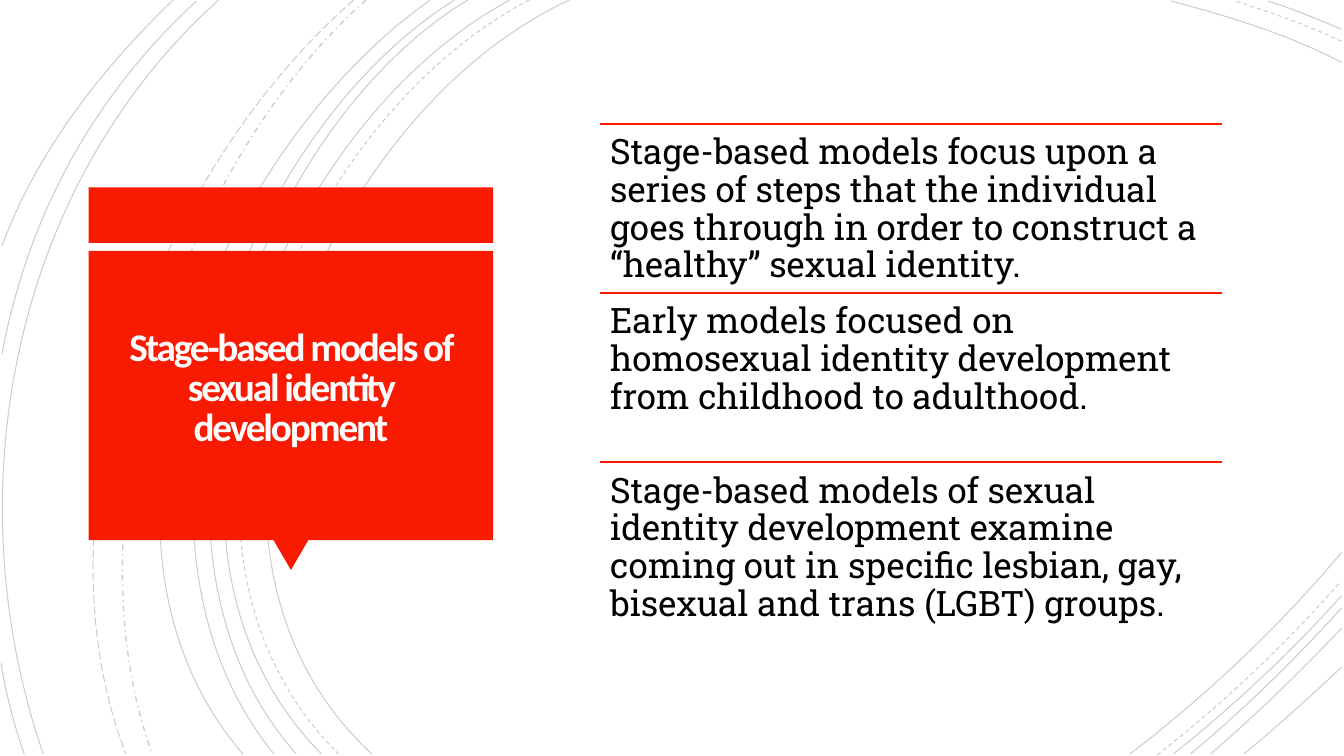
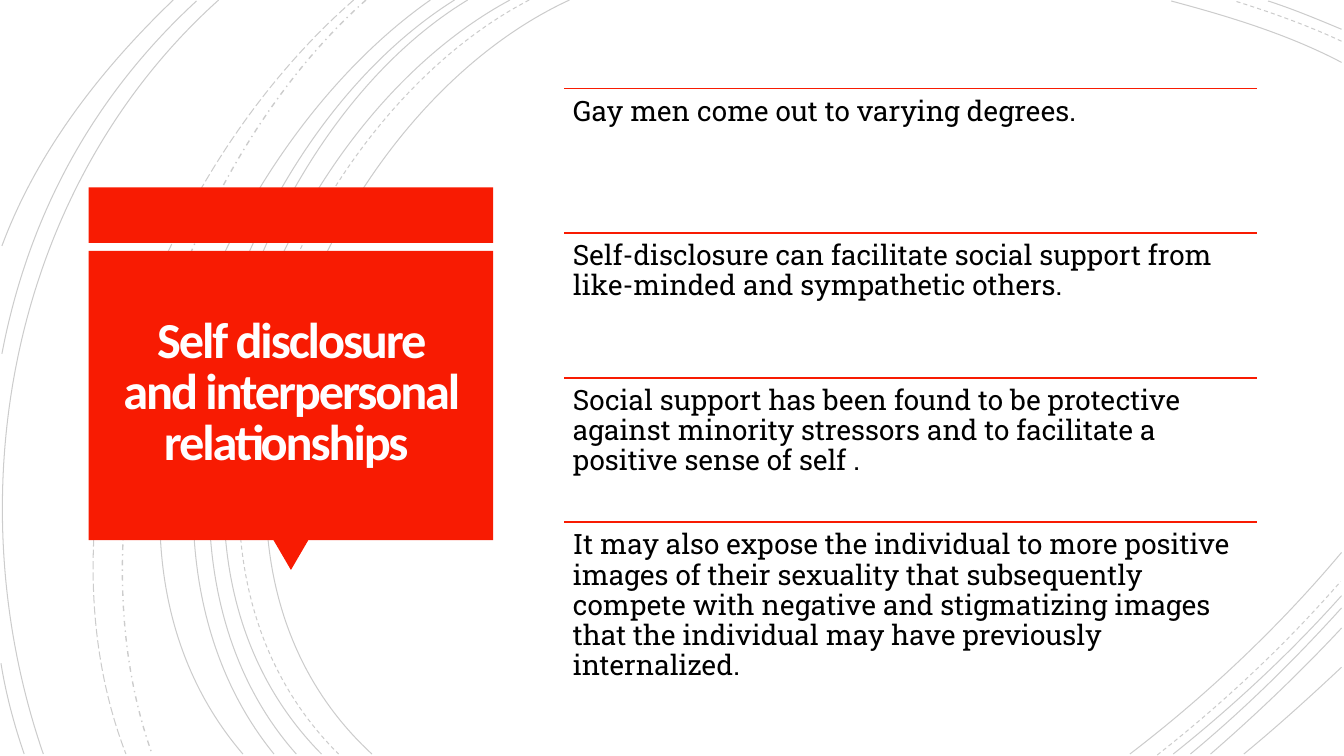
from collections import namedtuple

from lxml import etree
from pptx import Presentation
from pptx.dml.color import RGBColor
from pptx.enum.dml import MSO_LINE
from pptx.enum.shapes import MSO_CONNECTOR, MSO_SHAPE
from pptx.enum.text import MSO_ANCHOR, PP_ALIGN
from pptx.oxml.ns import qn
from pptx.util import Pt

RECTANGLE, TRIANGLE = MSO_SHAPE.RECTANGLE, MSO_SHAPE.ISOSCELES_TRIANGLE
STRAIGHT = MSO_CONNECTOR.STRAIGHT
SOLID, DASH = MSO_LINE.SOLID, MSO_LINE.DASH
DASH_DOT, LONG_DASH = MSO_LINE.DASH_DOT, MSO_LINE.LONG_DASH
TOP, MIDDLE = MSO_ANCHOR.TOP, MSO_ANCHOR.MIDDLE
LEFT, CENTER = PP_ALIGN.LEFT, PP_ALIGN.CENTER

Box = namedtuple("Box", "left top width height")

COLORS = {"accent": "F81B02", "title": "FFFEFF", "body": "000000", "arc": "000000"}
TITLE_FONT, BODY_FONT = "Calibri", "Roboto Slab"
ARC_OPACITY = 20
BAND_HEIGHT, BAND_GAP = 39.6, 5.7
POINTER_WIDTH, POINTER_HEIGHT, POINTER_OVERLAP = 25.2, 21.6, 0.4
TITLE_MARGIN, TITLE_INSET = 6.4, 18

PAGE = Box(0, 0, 960, 540)
PANEL = Box(63.3, 133.9, 289, 252)

ARCS = [
    (SOLID, 0.75, (406.8, 0), (226.8, 82.8), (103, 388.8), (265.7, 538.6)),
    (SOLID, 0.75, (958.3, 44.6), (920.2, 24.5), (877, 11.5), (836.6, 0.7)),
    (SOLID, 0.75, (807.1, 538.6), (861.8, 496.8), (913.7, 447.8), (958.3, 394.6)),
    (DASH, 0.75, (378, 0), (205.2, 90), (88.6, 386.6), (241.9, 538.6)),
    (DASH, 0.75, (958.3, 29.5), (933.8, 18), (907.2, 8.6), (882, 0.7)),
    (DASH, 0.75, (826.6, 539.3), (873.4, 502.6), (918, 460.8), (957.6, 415.4)),
    (SOLID, 0.75, (364.3, 0), (194.4, 91.4), (79.2, 386.6), (229.7, 538.6)),
    (SOLID, 0.75, (958.3, 20.9), (941, 13.7), (923.8, 6.5), (905.8, 0.7)),
    (SOLID, 0.75, (838.1, 538.6), (880.6, 504.7), (921.6, 466.6), (958.3, 425.5)),
    (SOLID, 0.75, (334.1, 0), (175.7, 95.8), (79.2, 389.5), (211.7, 538.6)),
    (SOLID, 0.75, (850.3, 538.6), (888.5, 506.9), (924.5, 471.6), (958.3, 434.2)),
    (SOLID, 0.75, (324.7, 0), (166.3, 99.4), (69.8, 383.8), (195.8, 538.6)),
    (SOLID, 0.75, (864.7, 538.6), (897.1, 510.5), (928.8, 480.2), (958.3, 448.6)),
    (SOLID, 0.75, (307.4, 0), (156.2, 105.8), (38.2, 380.9), (173.5, 538.6)),
    (SOLID, 0.75, (888.5, 538.6), (912.2, 519.1), (935.3, 498.2), (958.3, 476.6)),
    (DASH_DOT, 1, (261.4, 0), (126.7, 119.5), (46.8, 366.5), (108.7, 538.6)),
    (LONG_DASH, 0.75, (252.7, 0), (113, 121.7), (20.9, 359.3), (90, 538.6)),
    (SOLID, 0.75, (156.2, 0), (7.9, 133.2), (-33.1, 352.8), (31, 538.6)),
    (SOLID, 0.75, (140.4, 0.7), (66.2, 69.1), (20.2, 154.1), (1.4, 252.7)),
    (SOLID, 0.75, (0.7, 473.8), (4.3, 496.1), (10.1, 517.7), (17.3, 538.6)),
    (SOLID, 0.75, (123.8, 0), (72, 49.7), (26.6, 108), (1.4, 175.7)),
]

SLIDES = [
    {
        "title": "Stage-based models of sexual identity development",
        "title_size": 28,
        "title_lift": 3,
        "list_box": Box(428.4, 88.4, 444.2, 362.7),
        "size": 25,
        "inset": 7.5,
        "statements": [
            "Stage-based models focus upon a series of steps that the individual "
            "goes through in order to construct a “healthy” sexual identity.",
            "Early models focused on homosexual identity development from "
            "childhood to adulthood.",
            "Stage-based models of sexual identity development examine coming out "
            "in specific lesbian, gay, bisexual and trans (LGBT) groups.",
        ],
    },
    {
        "title": "Self disclosure and interpersonal relationships ",
        "title_size": 36,
        "title_lift": 0,
        "list_box": Box(403.2, 63.2, 494.6, 413.2),
        "size": 20,
        "inset": 6,
        "statements": [
            "Gay men come out to varying degrees.",
            "Self-disclosure can facilitate social support from like-minded and "
            "sympathetic others.",
            "Social support has been found to be protective against minority "
            "stressors and to facilitate a positive sense of self .",
            "It may also expose the individual to more positive images of their "
            "sexuality that subsequently compete with negative and stigmatizing "
            "images that the individual may have previously internalized.",
        ],
    },
]


def color(name):
    """Return the named colour."""
    return RGBColor.from_string(COLORS[name])


def in_points(box):
    """Convert a box to slide lengths."""
    return [Pt(length) for length in box]


def add_curve(page, points):
    """Add an open cubic curve from its four control points."""
    builder = page.shapes.build_freeform(*points[0])
    builder.add_line_segments(points[1:], close=False)
    curve = builder.convert_to_shape()
    segments = list(curve._element.iter(qn("a:lnTo")))
    outline = segments[0].getparent()
    bezier = etree.SubElement(outline, qn("a:cubicBezTo"))
    for segment in segments:
        bezier.append(segment[0])
        outline.remove(segment)
    return curve


def add_arcs(page, box):
    """Draw the faint background arcs from the corner of the box."""
    for dash, width, *controls in ARCS:
        arc = add_curve(page, [(Pt(box.left + x), Pt(box.top + y)) for x, y in controls])
        arc.shadow.inherit = False
        arc.fill.background()
        arc.line.width = Pt(width)
        arc.line.color.rgb = color("arc")
        arc.line.dash_style = dash
        paint = arc._element.spPr.find(".//" + qn("a:srgbClr"))
        etree.SubElement(paint, qn("a:alpha"), val=str(ARC_OPACITY * 1000))


def add_block(page, kind, box):
    """Add a plain accent shape."""
    block = page.shapes.add_shape(kind, *in_points(box))
    block.shadow.inherit = False
    block.fill.solid()
    block.fill.fore_color.rgb = color("accent")
    block.line.fill.background()
    return block


def add_text(page, box, text, inset, anchor, alignment, spacing):
    """Add a text box and return its single run of text."""
    frame = page.shapes.add_textbox(*in_points(box)).text_frame
    frame.word_wrap = True
    frame.vertical_anchor = anchor
    frame.margin_left = frame.margin_right = Pt(inset)
    frame.margin_top = frame.margin_bottom = Pt(inset)
    para = frame.paragraphs[0]
    para.alignment = alignment
    para.line_spacing = spacing
    span = para.add_run()
    span.text = text
    return span


def style_span(span, font, size, color_name, bold=False):
    """Set the font of a run."""
    span.font.name = font
    span.font.size = Pt(size)
    span.font.bold = bold
    span.font.color.rgb = color(color_name)


def add_title_panel(page, box, title, size, lift):
    """Add the band, the pointer, the title block and its title."""
    body_top = box.top + BAND_HEIGHT + BAND_GAP
    bottom = box.top + box.height
    body = Box(box.left, body_top, box.width, bottom - body_top)
    add_block(page, RECTANGLE, Box(box.left, box.top, box.width, BAND_HEIGHT))
    pointer = add_block(page, TRIANGLE, Box(
        box.left + (box.width - POINTER_WIDTH) / 2, bottom - POINTER_OVERLAP,
        POINTER_WIDTH, POINTER_HEIGHT))
    pointer.rotation = 180
    add_block(page, RECTANGLE, body)
    title_box = Box(body.left + TITLE_MARGIN, body.top + TITLE_MARGIN - 1 - lift,
                    body.width - 2 * TITLE_MARGIN, body.height - 2 * TITLE_MARGIN)
    span = add_text(page, title_box, title, TITLE_INSET, MIDDLE, CENTER, 0.85)
    style_span(span, TITLE_FONT, size, "title", bold=True)
    span.font._element.set("spc", "-150")


def add_ruled_list(page, box, statements, size, inset):
    """Stack statements in equal rows, each under a rule."""
    row_height = box.height / len(statements)
    for index, statement in enumerate(statements):
        row = Box(box.left, box.top + index * row_height, box.width, row_height)
        rule = page.shapes.add_connector(
            STRAIGHT, Pt(row.left), Pt(row.top), Pt(row.left + row.width), Pt(row.top))
        rule.line.color.rgb = color("accent")
        rule.line.width = Pt(1.25)
        etree.SubElement(rule._element.spPr, qn("a:effectLst"))
        span = add_text(page, row, statement, inset, TOP, LEFT, 0.9)
        style_span(span, BODY_FONT, size, "body")


def add_statement_slide(deck, content):
    """Add a slide with a title panel and a ruled list."""
    page = deck.slides.add_slide(deck.slide_layouts[6])
    add_arcs(page, PAGE)
    add_title_panel(page, PANEL, content["title"], content["title_size"],
                    content["title_lift"])
    add_ruled_list(page, content["list_box"], content["statements"],
                   content["size"], content["inset"])


def main():
    """Build and save the deck."""
    deck = Presentation()
    deck.slide_width, deck.slide_height = Pt(PAGE.width), Pt(PAGE.height)
    for content in SLIDES:
        add_statement_slide(deck, content)
    deck.save("out.pptx")


if __name__ == "__main__":
    main()
